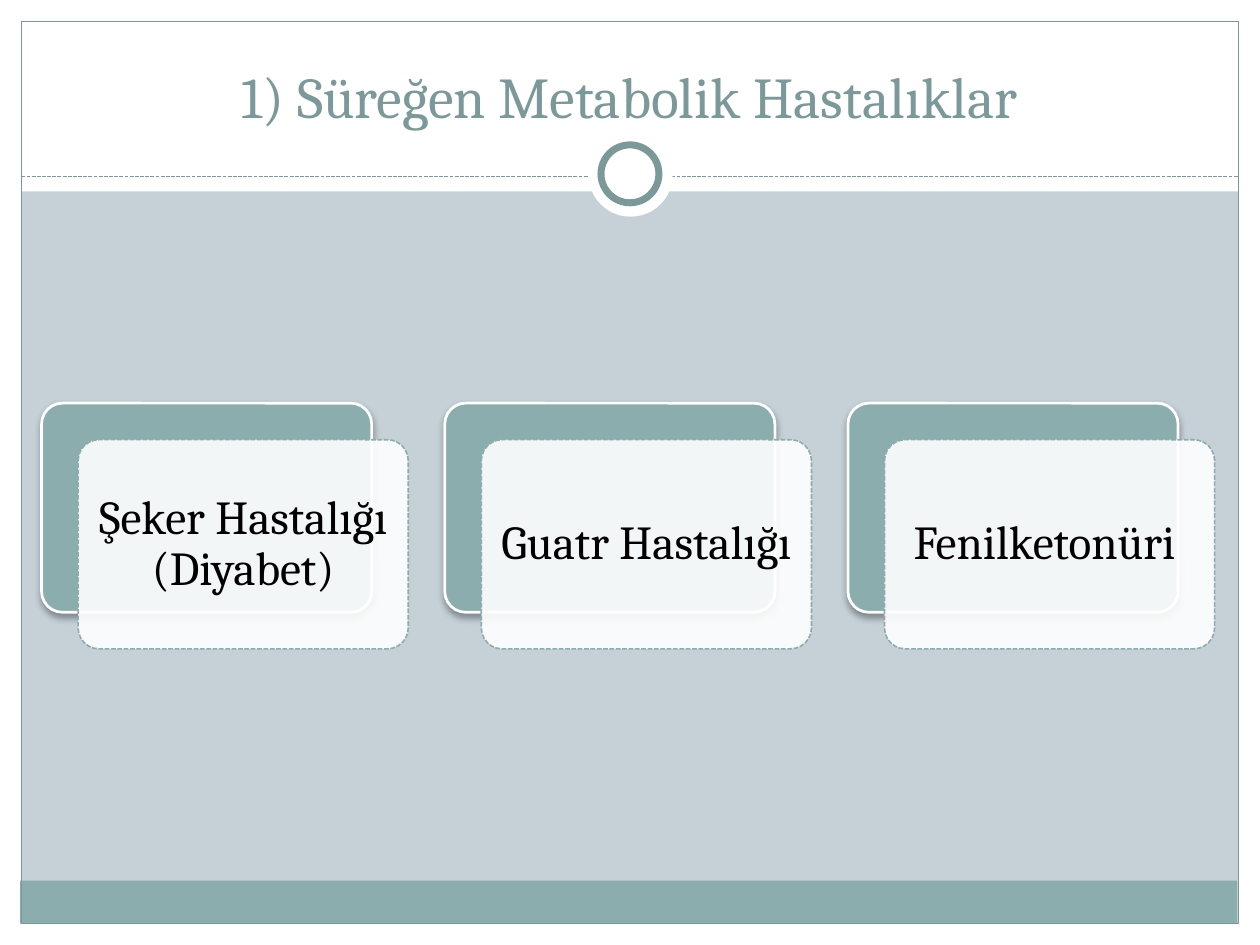
from lxml import etree
from pptx import Presentation, util as u
from pptx.dml.color import RGBColor
from pptx.enum import dml, shapes, text
from pptx.oxml import parse_xml
from pptx.oxml.ns import qn

NS = "http://schemas.openxmlformats.org/drawingml/2006/main"
HUES = {"back": "C5D1D7", "white": "FFFFFF", "teal": "8CADAE",
        "dark": "7C999A", "black": "000000"}
KIND = shapes.MSO_SHAPE


class Deck:
    font = "Cambria"

    def __init__(self, wide, high):
        self.prs = Presentation()
        self.prs.slide_width = u.Inches(wide)
        self.prs.slide_height = u.Inches(high)
        self.slide = self.prs.slides.add_slide(self.prs.slide_layouts[5])
        self.paint(self.slide.background.fill, "back")

    def paint(self, fill, hue):
        fill.solid()
        fill.fore_color.rgb = RGBColor.from_string(HUES[hue])

    def stroke(self, line, hue, width, dash=False):
        self.paint(line.fill, hue)
        line.width = u.Pt(width)
        if dash:
            line.dash_style = dml.MSO_LINE.SQUARE_DOT

    def shape(self, kind, box, fill=None, line=None):
        item = self.slide.shapes.add_shape(kind, *map(u.Inches, box))
        item.shadow.inherit = False
        if fill:
            self.paint(item.fill, fill)
        else:
            item.fill.background()
        if line:
            self.stroke(item.line, *line)
        else:
            item.line.fill.background()
        return item

    def rule(self, left, right, top):
        item = self.slide.shapes.add_connector(
            shapes.MSO_CONNECTOR.STRAIGHT,
            *map(u.Inches, (left, top, right, top)))
        self.stroke(item.line, "dark", 0.75, True)
        etree.SubElement(item.element.spPr, qn("a:effectLst"))

    def label(self, item, words, size, hue, anchor):
        frame = item.text_frame
        frame.word_wrap = True
        frame.auto_size = text.MSO_AUTO_SIZE.NONE
        frame.vertical_anchor = anchor
        frame.text = words
        para = frame.paragraphs[0]
        para.alignment = text.PP_ALIGN.CENTER
        para.font.name = self.font
        para.font.size = u.Pt(size)
        para.font.color.rgb = RGBColor.from_string(HUES[hue])
        return para

    def title(self, words, box):
        item = self.slide.shapes.title
        item.left, item.top, item.width, item.height = map(u.Inches, box)
        self.label(item, words, 33, "dark", text.MSO_ANCHOR.BOTTOM)
        item.element.getparent().append(item.element)

    def shade(self, item):
        glow = item.element.spPr.find(qn("a:effectLst"))
        glow.append(parse_xml(
            f'<a:outerShdw xmlns:a="{NS}" blurRad="{u.Pt(4)}" '
            f'dist="{u.Pt(2)}" dir="5400000" rotWithShape="0">'
            f'<a:srgbClr val="{HUES["black"]}"><a:alpha val="35000"/>'
            '</a:srgbClr></a:outerShdw>'))

    def card(self, words, left, top):
        wide, high, step = 2.62, 1.66, 0.29
        rear = self.shape(KIND.ROUNDED_RECTANGLE, (left, top, wide, high),
                          "teal", ("white", 1.57))
        self.shade(rear)
        front = self.shape(KIND.ROUNDED_RECTANGLE,
                           (left + step, top + step, wide, high),
                           "white", ("teal", 0.9, True))
        for item in (rear, front):
            item.adjustments[0] = 0.1
        tint = front.element.spPr.find(qn("a:solidFill"))[0]
        etree.SubElement(tint, qn("a:alpha"), val="90000")
        frame = front.text_frame
        frame.margin_left = frame.margin_right = u.Inches(0.11)
        frame.margin_top = frame.margin_bottom = u.Inches(0.11)
        para = self.label(front, words, 27, "black", text.MSO_ANCHOR.MIDDLE)
        para.line_spacing = 0.9


def main():
    deck = Deck(10, 7.5)
    for box in ((0, 7.33, 10, 0.17), (0, 0, 10, 1.52),
                (0, 0, 0.17, 7.5), (9.83, 0, 0.17, 7.5)):
        deck.shape(KIND.RECTANGLE, box, "white")
    deck.shape(KIND.RECTANGLE, (0.16, 6.99, 9.66, 0.34), "teal")
    deck.shape(KIND.RECTANGLE, (0.17, 0.17, 9.66, 7.16), None, ("dark", 0.75))
    deck.rule(0.17, 9.83, 1.4)
    deck.shape(KIND.OVAL, (4.67, 1.05, 0.67, 0.67), "white")
    deck.shape(KIND.OVAL, (4.77, 1.15, 0.46, 0.46), "white", ("dark", 4))
    deck.title("1) Süreğen Metabolik Hastalıklar", (0.33, 0.25, 9.33, 0.83))
    names = ("Şeker Hastalığı (Diyabet)", "Guatr Hastalığı", "Fenilketonüri ")
    for i, name in enumerate(names):
        deck.card(name, 0.33 + 3.2 * i, 3.2)
    deck.prs.save("out.pptx")


if __name__ == "__main__":
    main()
